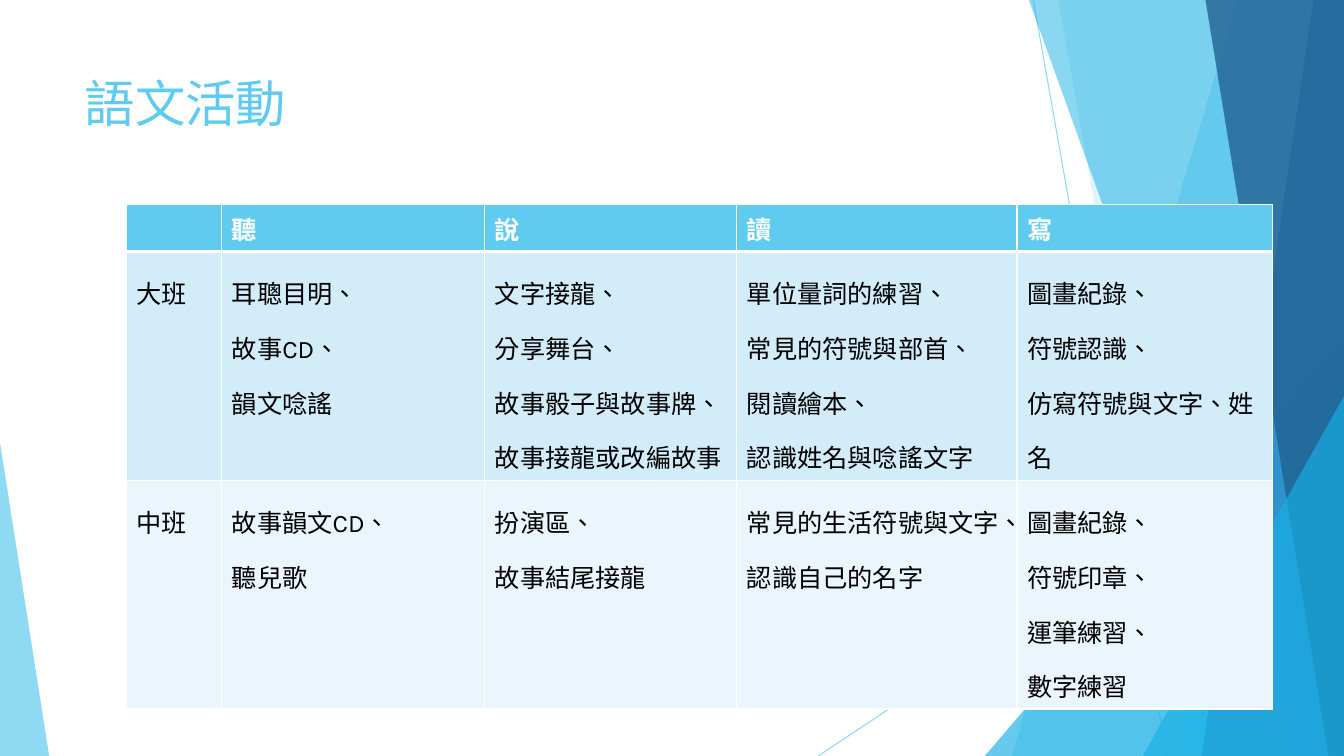
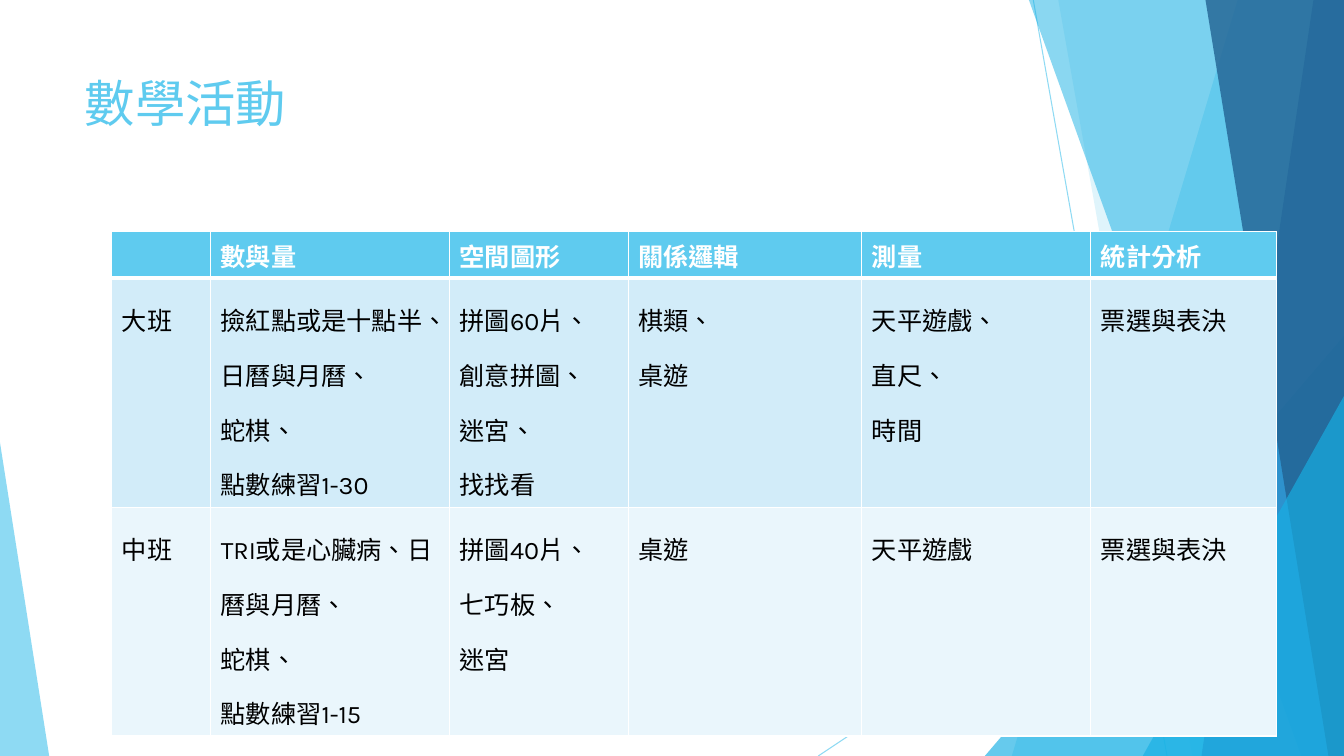
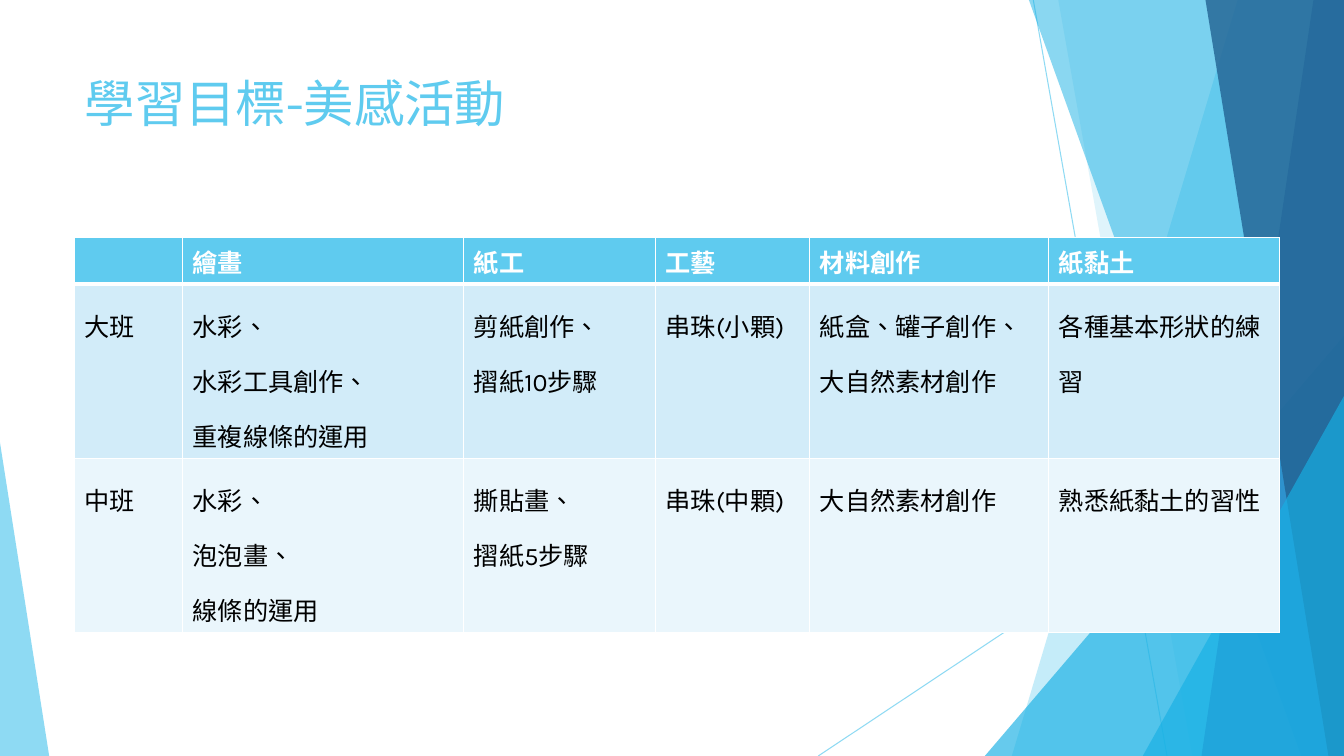
from dataclasses import dataclass

from lxml import etree
from pptx import Presentation
from pptx.dml.color import RGBColor
from pptx.enum.lang import MSO_LANGUAGE_ID
from pptx.enum.shapes import MSO_CONNECTOR, MSO_SHAPE
from pptx.enum.text import MSO_ANCHOR, MSO_AUTO_SIZE, PP_ALIGN
from pptx.oxml.ns import qn
from pptx.util import Cm, Pt

STRAIGHT = MSO_CONNECTOR.STRAIGHT
TRIANGLE = MSO_SHAPE.ISOSCELES_TRIANGLE
TOP = MSO_ANCHOR.TOP
LEFT = PP_ALIGN.LEFT
NO_AUTOFIT = MSO_AUTO_SIZE.NONE
TAIWAN_CHINESE = MSO_LANGUAGE_ID.TRADITIONAL_CHINESE
TITLE_ONLY = 5


@dataclass(frozen=True)
class Theme:
    """Colours, type and measures shared by all slides."""

    sky: str = "5FCBEF"
    cyan: str = "17B0E4"
    blue: str = "2E83C3"
    navy: str = "226292"
    white: str = "FFFFFF"
    black: str = "000000"
    row_fills: tuple = ("D2ECF9", "EAF6FC")
    font: str = "Karla"
    title_size: int = 36
    table_size: int = 18
    hairline: float = 0.75
    border: float = 1
    header_border: float = 3
    width: float = 33.87
    height: float = 19.05


THEME = Theme()

LINES = [(26.04, 0, 29.41, THEME.height), (THEME.width, 10.24, 20.62, THEME.height)]

SHARDS = [
    ("quad", (31.19, 25.5), THEME.sky, 36),
    ("quad", (26.67, 30.05), THEME.sky, 20),
    ("triangle", (24.82, 8.46, 9.05, 1), THEME.cyan, 66),
    ("quad", (25.93, 32.79), THEME.cyan, 50),
    ("quad", (33.1, 30.28), THEME.blue, 70),
    ("quad", (30.38, 33.48), THEME.navy, 80),
    ("triangle", (28.8, 9.98, 5.07, 1), THEME.cyan, 66),
    ("triangle", (0, 11.15, 1.24, 0), THEME.sky, 70),
]

ACTIVITIES = [
    {
        "title": "語文活動",
        "title_height": 2.26,
        "corner": (3.18, 5.16),
        "columns": [2.41, 6.63, 6.35, 7.06, 6.43],
        "row_heights": [1.04, 4.83, 4.83],
        "rows": [
            ["", "聽", "說", "讀", "寫"],
            [
                "大班",
                "耳聰目明、\n故事CD、\n韻文唸謠",
                "文字接龍、\n分享舞台、\n故事骰子與故事牌、故事接龍或改編故事",
                "單位量詞的練習、\n常見的符號與部首、\n閱讀繪本、\n認識姓名與唸謠文字",
                "圖畫紀錄、\n符號認識、\n仿寫符號與文字、姓名",
            ],
            [
                "中班",
                "故事韻文CD、\n聽兒歌",
                "扮演區、\n故事結尾接龍",
                "常見的生活符號與文字、認識自己的名字",
                "圖畫紀錄、\n符號印章、\n運筆練習、\n數字練習",
            ],
        ],
    },
    {
        "title": "數學活動",
        "title_height": 3.66,
        "corner": (2.82, 5.84),
        "columns": [2.49, 6.02, 4.5, 5.89, 5.77, 4.67],
        "row_heights": [1.04, 4.83, 4.83],
        "rows": [
            ["", "數與量", "空間圖形", "關係邏輯", "測量", "統計分析"],
            [
                "大班",
                "撿紅點或是十點半、日曆與月曆、\n蛇棋、\n點數練習1-30",
                "拼圖60片、\n創意拼圖、\n迷宮、\n找找看",
                "棋類、\n桌遊",
                "天平遊戲、\n直尺、\n時間",
                "票選與表決",
            ],
            [
                "中班",
                "TRI或是心臟病、日曆與月曆、\n蛇棋、\n點數練習1-15",
                "拼圖40片、\n七巧板、\n迷宮",
                "桌遊",
                "天平遊戲",
                "票選與表決",
            ],
        ],
    },
    {
        "title": "學習目標-美感活動",
        "title_height": 3.66,
        "corner": (1.88, 5.99),
        "columns": [2.72, 7.09, 4.83, 3.89, 6.02, 5.82],
        "row_heights": [1.04, 3.68, 3.68],
        "rows": [
            ["", "繪畫", "紙工", "工藝", "材料創作", "紙黏土"],
            [
                "大班",
                "水彩、\n水彩工具創作、\n重複線條的運用",
                "剪紙創作、\n摺紙10步驟",
                "串珠(小顆)",
                "紙盒、罐子創作、\n大自然素材創作",
                "各種基本形狀的練習",
            ],
            [
                "中班",
                "水彩、\n泡泡畫、\n線條的運用",
                "撕貼畫、\n摺紙5步驟",
                "串珠(中顆)",
                "大自然素材創作",
                "熟悉紙黏土的習性",
            ],
        ],
    },
]


def write_text(text_frame, text, *, size, color, bold=False, spacing=None):
    """Write each line of the text as one formatted paragraph."""
    for index, line in enumerate(text.split("\n")):
        paragraph = text_frame.add_paragraph() if index else text_frame.paragraphs[0]
        paragraph.alignment = LEFT
        paragraph.line_spacing = spacing
        run = paragraph.add_run()
        run.text = line
        run.font.name = THEME.font
        run.font.size = Pt(size)
        run.font.bold = bold
        run.font.color.rgb = RGBColor.from_string(color)
        run.font.language_id = TAIWAN_CHINESE


def set_opacity(shape, percent):
    """Give every colour of the shape the same opacity."""
    for color in shape.element.spPr.iter(qn("a:srgbClr")):
        etree.SubElement(color, qn("a:alpha"), val=str(percent * 1000))


def add_hairline(slide, start_x, start_y, end_x, end_y):
    """Draw one thin translucent line."""
    line = slide.shapes.add_connector(
        STRAIGHT, Cm(start_x), Cm(start_y), Cm(end_x), Cm(end_y)
    )
    line.line.color.rgb = RGBColor.from_string(THEME.sky)
    line.line.width = Pt(THEME.hairline)
    set_opacity(line, 70)
    etree.SubElement(line.element.spPr, qn("a:effectLst"))
    return line


def build_quad(slide, top_x, bottom_x):
    """Outline the area between a slanted edge and the right slide edge."""
    right, bottom = Cm(THEME.width), Cm(THEME.height)
    builder = slide.shapes.build_freeform(Cm(top_x), 0)
    builder.add_line_segments([(right, 0), (right, bottom), (Cm(bottom_x), bottom)])
    return builder.convert_to_shape()


def build_triangle(slide, left, top, width, apex):
    """Place a triangle that stands on the bottom slide edge."""
    shape = slide.shapes.add_shape(
        TRIANGLE, Cm(left), Cm(top), Cm(width), Cm(THEME.height - top)
    )
    shape.adjustments[0] = apex
    return shape


def add_shard(slide, kind, outline, color, opacity):
    """Draw one translucent shard of the backdrop."""
    build = build_quad if kind == "quad" else build_triangle
    shape = build(slide, *outline)
    shape.shadow.inherit = False
    shape.fill.solid()
    shape.fill.fore_color.rgb = RGBColor.from_string(color)
    shape.line.fill.background()
    set_opacity(shape, opacity)
    return shape


def prepare_layout(layout, slide):
    """Draw the backdrop with the slide and move it into the shared layout."""
    tree = layout.shapes.element
    for placeholder in list(layout.placeholders):
        if placeholder.placeholder_format.idx:
            tree.remove(placeholder.element)
    backdrop = [add_hairline(slide, *ends) for ends in LINES]
    backdrop += [add_shard(slide, *shard) for shard in SHARDS]
    for position, shape in enumerate(backdrop, start=2):
        tree.insert(position, shape.element)


def place_title(slide, text, left, top, width, height):
    """Fill the title placeholder and fit it to the box."""
    title = slide.shapes.title
    title.left, title.top = Cm(left), Cm(top)
    title.width, title.height = Cm(width), Cm(height)
    title.text_frame.vertical_anchor = TOP
    title.text_frame.auto_size = NO_AUTOFIT
    write_text(title.text_frame, text, size=THEME.title_size, color=THEME.sky)


def set_borders(cell, widths):
    """Draw white borders on the named sides of the cell."""
    properties = cell._tc.get_or_add_tcPr()
    for side, width in widths.items():
        line = etree.SubElement(properties, qn(f"a:ln{side}"), w=str(Pt(width)))
        fill = etree.SubElement(line, qn("a:solidFill"))
        etree.SubElement(fill, qn("a:srgbClr"), val=THEME.white)


def format_cell(cell, text, row_index):
    """Style one cell as header or body by its row."""
    thin = THEME.border
    if row_index == 0:
        borders = {"L": thin, "R": thin, "T": thin, "B": THEME.header_border}
        fill = THEME.sky
        style = {"color": THEME.white, "bold": True}
    else:
        borders = {"L": thin, "R": thin, "B": thin}
        fill = THEME.row_fills[(row_index - 1) % 2]
        style = {"color": THEME.black, "spacing": 1.5}
    set_borders(cell, borders)
    cell.fill.solid()
    cell.fill.fore_color.rgb = RGBColor.from_string(fill)
    if text:
        write_text(cell.text_frame, text, size=THEME.table_size, **style)


def place_table(slide, rows, left, top, columns, row_heights):
    """Place the activity table with its corner at the given point."""
    table = slide.shapes.add_table(
        len(rows),
        len(columns),
        Cm(left),
        Cm(top),
        Cm(sum(columns)),
        Cm(sum(row_heights)),
    ).table
    for column, width in zip(table.columns, columns):
        column.width = Cm(width)
    for row, height in zip(table.rows, row_heights):
        row.height = Cm(height)
    for row_index, texts in enumerate(rows):
        for column_index, text in enumerate(texts):
            format_cell(table.cell(row_index, column_index), text, row_index)


def fill_activity_slide(slide, activity):
    """Place the title and table of one activity."""
    place_title(slide, activity["title"], 1.88, 1.7, 23.88, activity["title_height"])
    place_table(
        slide,
        activity["rows"],
        *activity["corner"],
        activity["columns"],
        activity["row_heights"],
    )


def main():
    """Build and save the presentation."""
    presentation = Presentation()
    presentation.slide_width = Cm(THEME.width)
    presentation.slide_height = Cm(THEME.height)
    layout = presentation.slide_layouts[TITLE_ONLY]
    slides = [presentation.slides.add_slide(layout) for _ in ACTIVITIES]
    prepare_layout(layout, slides[0])
    for slide, activity in zip(slides, ACTIVITIES):
        fill_activity_slide(slide, activity)
    presentation.save("out.pptx")


if __name__ == "__main__":
    main()
